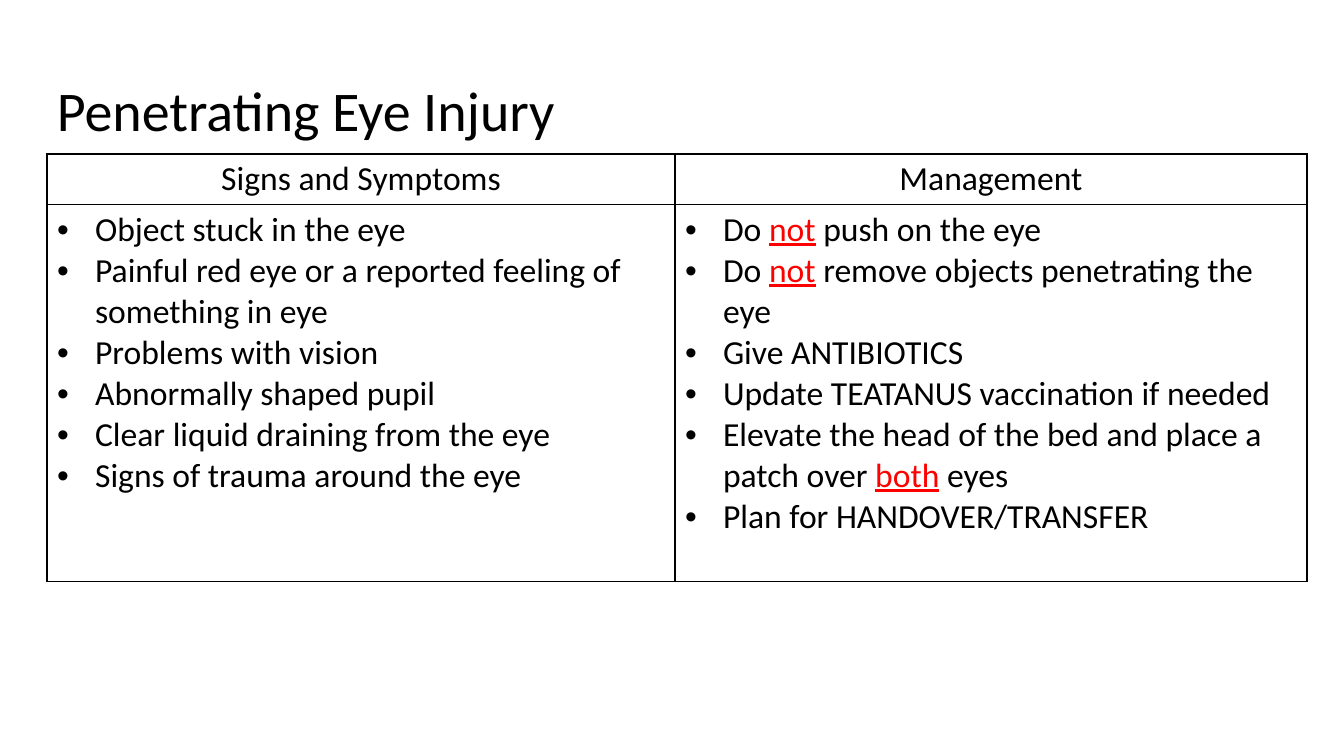
from lxml import etree
from pptx import Presentation
from pptx import util as u
from pptx.dml.color import RGBColor
from pptx.enum import text
from pptx.oxml import parse_xml
from pptx.oxml.ns import nsdecls, qn

BLACK = RGBColor(0, 0, 0)
RED = RGBColor(255, 0, 0)
FONT = "Calibri"
SLIDE_W, SLIDE_H = 1344, 756
SCALE = 12192000 / SLIDE_W

COLUMN_WIDTHS = [628, 632]
ROW_HEIGHTS = [47, 377]
INDENT = 38
HEADINGS = ["Signs and Symptoms", "Management"]
# Text between asterisks is emphasised.
POINTS = [
    [
        "Object stuck in the eye",
        "Painful red eye or a reported feeling of something in eye",
        "Problems with vision",
        "Abnormally shaped pupil",
        "Clear liquid draining from the eye",
        "Signs of trauma around the eye",
    ],
    [
        "Do *not* push on the eye",
        "Do *not* remove objects penetrating the eye",
        "Give ANTIBIOTICS",
        "Update TEATANUS vaccination if needed",
        "Elevate the head of the bed and place a patch over *both* eyes",
        "Plan for HANDOVER/TRANSFER",
    ],
]


def px(n):
    return u.Emu(round(n * SCALE))


def add_runs(p, line, size):
    """Add the line to p, with every part between asterisks red and underlined."""
    for i, part in enumerate(line.split("*")):
        r = p.add_run()
        r.text = part
        r.font.name = FONT
        r.font.size = u.Pt(size)
        r.font.color.rgb = RED if i % 2 else BLACK
        if i % 2:
            r.font.underline = True


prs = Presentation()
prs.slide_width, prs.slide_height = px(SLIDE_W), px(SLIDE_H)
s = prs.slides.add_slide(prs.slide_layouts[6])

# Title
tf = s.shapes.add_textbox(px(47), px(40), px(1250), px(146)).text_frame
tf.word_wrap = True
tf.vertical_anchor = text.MSO_ANCHOR.MIDDLE
p = tf.paragraphs[0]
p.line_spacing = 0.9
add_runs(p, "Penetrating Eye Injury", 40)

# Table
table = s.shapes.add_table(
    2, 2, px(47), px(154), px(sum(COLUMN_WIDTHS)), px(sum(ROW_HEIGHTS))
).table
table.first_row = False
table.horz_banding = False
for column, width in zip(table.columns, COLUMN_WIDTHS):
    column.width = px(width)
for row, height in zip(table.rows, ROW_HEIGHTS):
    row.height = px(height)

for cell in table.iter_cells():
    tcPr = cell._tc.get_or_add_tcPr()
    for side in ("lnL", "lnR", "lnT", "lnB"):
        tcPr.append(parse_xml(
            f'<a:{side} {nsdecls("a")} w="{u.Pt(1)}"><a:solidFill>'
            f'<a:srgbClr val="{BLACK}"/></a:solidFill></a:{side}>'))
    cell.fill.background()

for col, (heading, points) in enumerate(zip(HEADINGS, POINTS)):
    p = table.cell(0, col).text_frame.paragraphs[0]
    p.alignment = text.PP_ALIGN.CENTER
    add_runs(p, heading, 24)

    tf = table.cell(1, col).text_frame
    for i, point in enumerate(points):
        p = tf.add_paragraph() if i else tf.paragraphs[0]
        pPr = p._p.get_or_add_pPr()
        pPr.set("marL", str(px(INDENT)))
        pPr.set("indent", str(-px(INDENT)))
        etree.SubElement(pPr, qn("a:buFont"), typeface="Arial")
        etree.SubElement(pPr, qn("a:buChar"), char="•")
        add_runs(p, point, 24)

prs.save("out.pptx")
